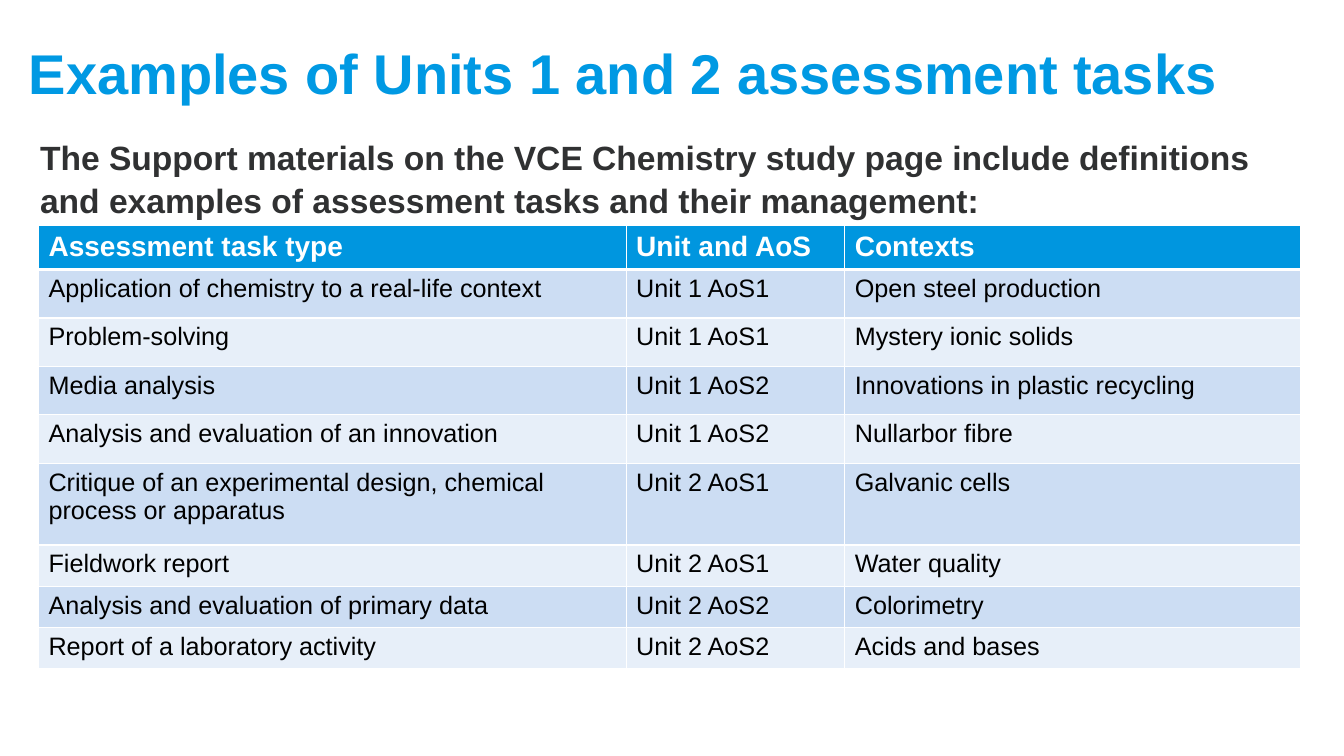
from lxml.etree import SubElement
from pptx import Presentation
from pptx.dml.color import RGBColor
from pptx.enum.text import MSO_ANCHOR as Anchor
from pptx.oxml.ns import qn
from pptx.util import Cm, Pt

COLORS = {
    "title": "0099E3",
    "body": "303132",
    "header": "0096DF",
    "band_dark": "CCDDF3",
    "band_light": "E7EFF9",
    "white": "FFFFFF",
    "black": "000000",
}
TASKS = [
    ("Assessment task type", "Unit and AoS", "Contexts"),
    ("Application of chemistry to a real-life context", "Unit 1 AoS1", "Open steel production"),
    ("Problem-solving", "Unit 1 AoS1", "Mystery ionic solids"),
    ("Media analysis", "Unit 1 AoS2", "Innovations in plastic recycling"),
    ("Analysis and evaluation of an innovation", "Unit 1 AoS2", "Nullarbor fibre"),
    ("Critique of an experimental design, chemical process or apparatus",
     "Unit 2 AoS1", "Galvanic cells"),
    ("Fieldwork report", "Unit 2 AoS1", "Water quality"),
    ("Analysis and evaluation of primary data", "Unit 2 AoS2", "Colorimetry"),
    ("Report of a laboratory activity", "Unit 2 AoS2", "Acids and bases"),
]
COLUMN_WIDTHS = [14.81, 5.51, 11.48]
ROW_HEIGHTS = [1.04] + [1.22] * 4 + [2.06] + [1.04] * 3


def write(frame, text, size, color, bold=False, anchor=Anchor.TOP, spacing=None):
    frame.word_wrap = True
    frame.vertical_anchor = anchor
    para = frame.paragraphs[0]
    para.line_spacing = spacing
    span = para.add_run()
    span.text = text
    span.font.name = "Arial"
    span.font.size = Pt(size)
    span.font.bold = bold
    span.font.color.rgb = RGBColor.from_string(COLORS[color])


def add_border(cell, side, points):
    """Draw a white line on one side of a cell: L, R, T or B, in that order."""
    line = SubElement(cell._tc.get_or_add_tcPr(), qn(f"a:ln{side}"), w=str(Pt(points)))
    fill = SubElement(line, qn("a:solidFill"))
    SubElement(fill, qn("a:srgbClr"), val=COLORS["white"])


deck = Presentation()
deck.slide_width, deck.slide_height = Cm(33.87), Cm(19.05)
page = deck.slides.add_slide(deck.slide_layouts[6])

title_box = page.shapes.add_textbox(Cm(0.48), Cm(0.38), Cm(32.26), Cm(2.87))
write(title_box.text_frame, "Examples of Units 1 and 2 assessment tasks", 40, "title",
      bold=True, anchor=Anchor.MIDDLE)

intro_box = page.shapes.add_textbox(Cm(0.76), Cm(3.25), Cm(32.26), Cm(13.69))
write(intro_box.text_frame,
      "The Support materials on the VCE Chemistry study page include definitions "
      "and examples of assessment tasks and their management:",
      24, "body", bold=True, spacing=1.07)

table = page.shapes.add_table(
    len(TASKS), len(COLUMN_WIDTHS), Cm(0.97), Cm(5.69),
    Cm(sum(COLUMN_WIDTHS)), Cm(sum(ROW_HEIGHTS))).table
for column, width in zip(table.columns, COLUMN_WIDTHS):
    column.width = Cm(width)

for index, (row, height, texts) in enumerate(zip(table.rows, ROW_HEIGHTS, TASKS)):
    row.height = Cm(height)
    is_header = index == 0
    band = "header" if is_header else "band_dark" if index % 2 else "band_light"
    borders = {"L": 1, "R": 1, "T": 3 if index == 1 else 1, "B": 3 if is_header else 1}
    for cell, text in zip(row.cells, texts):
        for side, points in borders.items():
            add_border(cell, side, points)
        cell.fill.solid()
        cell.fill.fore_color.rgb = RGBColor.from_string(COLORS[band])
        write(cell.text_frame, text, 20 if is_header else 18,
              "white" if is_header else "black", bold=is_header)

deck.save("out.pptx")
